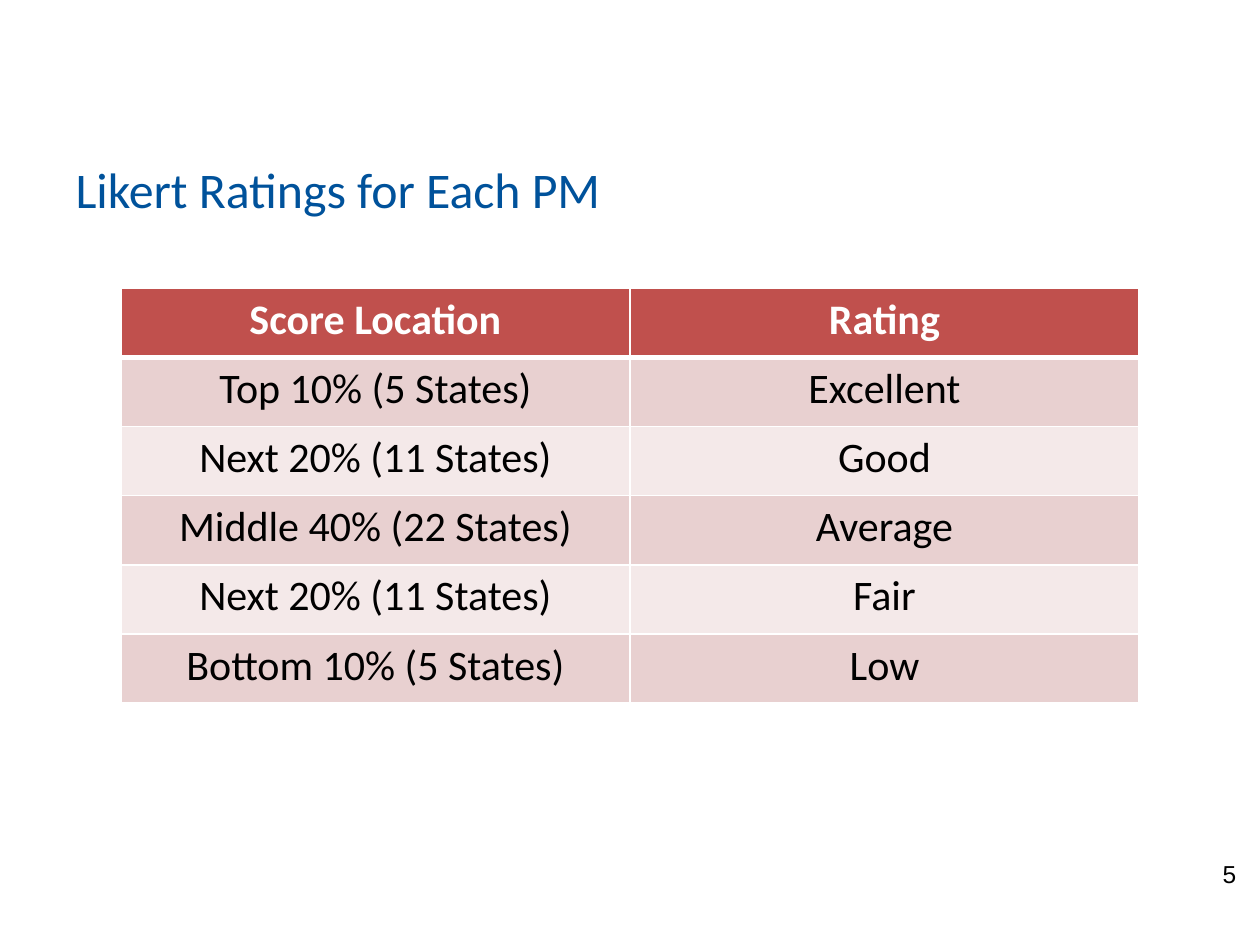
from lxml import etree
from pptx import Presentation
from pptx.dml.color import RGBColor
from pptx.enum import text
from pptx.oxml.ns import qn
from pptx.util import Inches, Pt

COLORS = {
    "title": "00529B", "black": "000000", "white": "FFFFFF",
    "header": "C0504D", "dark_band": "E8D0D0", "light_band": "F4E9E9",
}
RATINGS = [
    ("Score Location", "Rating"),
    ("Top 10% (5 States)", "Excellent"),
    ("Next 20% (11 States)", "Good"),
    ("Middle 40% (22 States)", "Average"),
    ("Next 20% (11 States)", "Fair"),
    ("Bottom 10% (5 States)", "Low"),
]


def rgb(name):
    return RGBColor.from_string(COLORS[name])


def write(tf, content, size, color="black", font="Calibri", bold=False,
          align=text.PP_ALIGN.LEFT):
    p = tf.paragraphs[0]
    p.alignment = align
    r = p.add_run()
    r.text = content
    r.font.name, r.font.size, r.font.bold = font, Pt(size), bold
    r.font.color.rgb = rgb(color)


def add_border(cell, side, width):
    """Draw a white line on side L, R, T or B; call before filling the cell."""
    tc_pr = cell._tc.get_or_add_tcPr()
    ln = etree.SubElement(tc_pr, qn(f"a:ln{side}"), w=str(Pt(width)))
    fill = etree.SubElement(ln, qn("a:solidFill"))
    etree.SubElement(fill, qn("a:srgbClr"), val=COLORS["white"])


class SlideBuilder:
    def __init__(self, slide, font="Calibri"):
        self.slide = slide
        self.font = font

    def title(self, content, left, top, width, height):
        sp = self.slide.shapes.title
        sp.left, sp.top = Inches(left), Inches(top)
        sp.width, sp.height = Inches(width), Inches(height)
        tf = sp.text_frame
        tf.auto_size = text.MSO_AUTO_SIZE.NONE
        tf.vertical_anchor = text.MSO_ANCHOR.MIDDLE
        write(tf, content, 28.5, "title", self.font)

    def page_number(self, number, left, top, width, height):
        sp = self.slide.shapes.add_textbox(
            Inches(left), Inches(top), Inches(width), Inches(height))
        sp.text_frame.word_wrap = True
        write(sp.text_frame, str(number), 14, font="Arial",
              align=text.PP_ALIGN.RIGHT)

    def table(self, rows, left, top, width, height):
        table = self.slide.shapes.add_table(
            len(rows), len(rows[0]), Inches(left), Inches(top),
            Inches(width), Inches(height)).table
        for i, row in enumerate(rows):
            for j, content in enumerate(row):
                self.cell(table.cell(i, j), content, i)

    def cell(self, cell, content, row):
        header = row == 0
        band = "header" if header else "dark_band" if row % 2 else "light_band"
        widths = {"L": 1, "R": 1, "T": 3 if row == 1 else 1,
                  "B": 3 if header else 1}
        for side, width in widths.items():
            add_border(cell, side, width)
        cell.fill.solid()
        cell.fill.fore_color.rgb = rgb(band)
        write(cell.text_frame, content, 24, "white" if header else "black",
              self.font, bold=header, align=text.PP_ALIGN.CENTER)


def main():
    prs = Presentation()
    prs.slide_width, prs.slide_height = Inches(10), Inches(7.5)
    title_only = prs.slide_layouts[5]
    builder = SlideBuilder(prs.slides.add_slide(title_only))
    builder.title("Likert Ratings for Each PM", 0.5, 1.16, 9, 0.67)
    builder.page_number(5, 9.1, 6.77, 0.81, 0.38)
    builder.table(RATINGS, 0.96, 2.29, 8.08, 3.29)
    prs.save("out.pptx")


if __name__ == "__main__":
    main()
